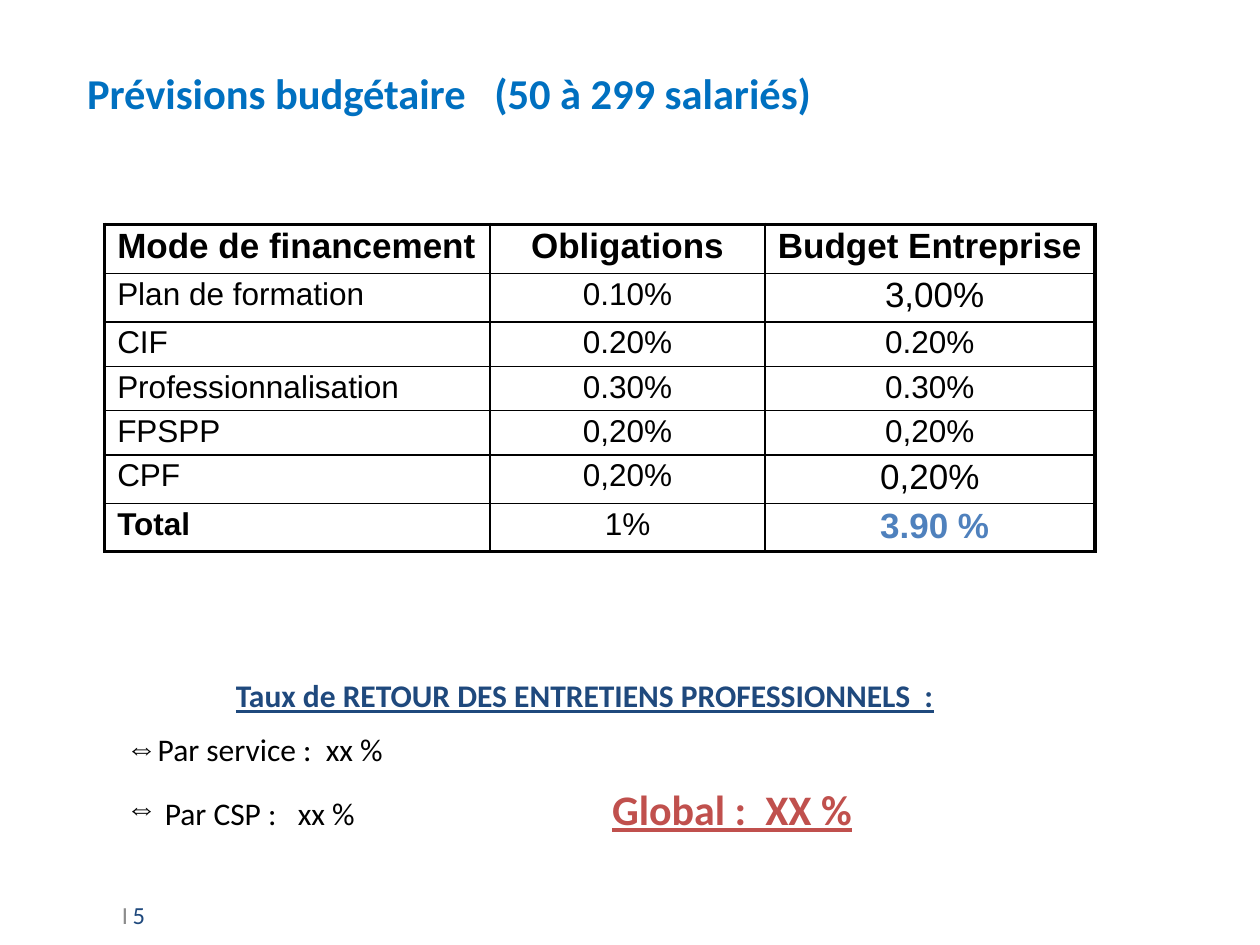
from lxml import etree
from pptx import Presentation
from pptx.dml.color import RGBColor
from pptx.enum.text import MSO_ANCHOR, MSO_AUTO_SIZE, PP_ALIGN
from pptx.oxml.ns import qn
from pptx.util import Cm, Pt

LEFT, CENTER = PP_ALIGN.LEFT, PP_ALIGN.CENTER
MIDDLE = MSO_ANCHOR.MIDDLE
COLORS = {"black": "000000", "title": "0070C0", "navy": "1F497D",
          "blue": "4F81BD", "red": "C0504D", "gray": "8C8C8C"}

# Content
TITLE = "Prévisions budgétaire   (50 à 299 salariés)"
ROWS = [
    ("Mode de financement", "Obligations", "Budget Entreprise"),
    ("Plan de formation", "0.10%", " 3,00%"),
    ("CIF", "0.20%", "0.20%"),
    ("Professionnalisation", "0.30%", "0.30%"),
    ("FPSPP", "0,20%", "0,20%"),
    ("CPF", "0,20%", "0,20%"),
    ("Total", "1%", " 3.90 %"),
]
COL_WIDTHS = [7.77, 5.54, 6.65]
ROW_HEIGHTS = [0.99, 0.98, 0.89, 0.89, 0.89, 0.98, 0.95]
LAST_ROW, LAST_COL = len(ROWS) - 1, len(COL_WIDTHS) - 1
LARGE_CELLS = {(1, 2), (5, 2), (6, 2)}
BOLD_CELLS = {(LAST_ROW, 0), (LAST_ROW, LAST_COL)}
RATES_HEADING = "Taux de RETOUR DES ENTRETIENS PROFESSIONNELS  :"
RATES = ["Par service :  xx %", " Par CSP :   xx %"]
GLOBAL_RATE = "Global :  XX %"
PAGE_RUNS = [(" ", 12, "gray"), ("I", 14, "gray"), (" ", 12, "gray"), ("5", 14, "navy")]


def add_run(p, text, size, color="black", font="Calibri", bold=False, underline=False):
    r = p.add_run()
    r.text = text
    r.font.size, r.font.name = Pt(size), font
    r.font.bold, r.font.underline = bold, underline
    r.font.color.rgb = RGBColor.from_string(COLORS[color])


def add_text_frame(s, left, top, width, height):
    tf = s.shapes.add_textbox(Cm(left), Cm(top), Cm(width), Cm(height)).text_frame
    tf.word_wrap = True
    return tf


def set_borders(cell, row, col):
    outer = {"L": col == 0, "R": col == LAST_COL, "T": row == 0, "B": row == LAST_ROW}
    tcPr = cell._tc.get_or_add_tcPr()
    for i, (side, thick) in enumerate(outer.items()):
        ln = etree.Element(qn(f"a:ln{side}"), w=str(Pt(2.25 if thick else 1)))
        fill = etree.SubElement(ln, qn("a:solidFill"))
        etree.SubElement(fill, qn("a:srgbClr"), val=COLORS["black"])
        tcPr.insert(i, ln)


def set_bullet(p, char, indent, tab=None):
    pPr = p._p.get_or_add_pPr()
    pPr.set("marL", str(indent))
    pPr.set("indent", str(-indent))
    etree.SubElement(pPr, qn("a:buFont"), typeface="Arial")
    etree.SubElement(pPr, qn("a:buChar"), char=char)
    if tab:
        tabs = etree.SubElement(pPr, qn("a:tabLst"))
        etree.SubElement(tabs, qn("a:tab"), pos=str(tab), algn="l")


prs = Presentation()
prs.slide_width, prs.slide_height = Cm(25.4), Cm(19.05)
s = prs.slides.add_slide(prs.slide_layouts[5])

# Title, raised within its box by the bottom inset
title = s.shapes.title
title.left, title.top, title.width, title.height = Cm(1.5), Cm(1.73), Cm(18), Cm(0.94)
tf = title.text_frame
tf.auto_size, tf.vertical_anchor = MSO_AUTO_SIZE.NONE, MIDDLE
tf.margin_top, tf.margin_bottom = 0, Cm(0.69)
tf.paragraphs[0].alignment = LEFT
add_run(tf.paragraphs[0], TITLE, 24.3, "title", bold=True)

# Budget table
table = s.shapes.add_table(len(ROWS), len(COL_WIDTHS), Cm(2.11), Cm(4.52),
                           Cm(sum(COL_WIDTHS)), Cm(sum(ROW_HEIGHTS))).table
table.first_row = table.horz_banding = False
for column, width in zip(table.columns, COL_WIDTHS):
    column.width = Cm(width)
for i, (values, height) in enumerate(zip(ROWS, ROW_HEIGHTS)):
    table.rows[i].height = Cm(height)
    for j, value in enumerate(values):
        cell = table.cell(i, j)
        cell.fill.background()
        set_borders(cell, i, j)
        p = cell.text_frame.paragraphs[0]
        p.alignment = CENTER if j else LEFT
        p.line_spacing = 0.9
        add_run(p, value, 20 if i == 0 or (i, j) in LARGE_CELLS else 18,
                "blue" if (i, j) == (LAST_ROW, LAST_COL) else "black",
                "Arial", i == 0 or (i, j) in BOLD_CELLS)

# Return rates
tf = add_text_frame(s, 2.29, 13.51, 19, 4.83)
p = tf.paragraphs[0]
p.alignment = CENTER
add_run(p, RATES_HEADING, 18, "navy", bold=True, underline=True)
for rate in RATES:
    p = tf.add_paragraph()
    p.space_before = Pt(9)
    last = rate == RATES[-1]
    set_bullet(p, "⇔", Cm(0.64), Cm(9.8) if last else None)
    add_run(p, rate + ("\t" if last else ""), 18)
add_run(p, GLOBAL_RATE, 24, "red", bold=True, underline=True)

# Page number
tf = add_text_frame(s, 2.11, 17.78, 2.54, 1.32)
tf.vertical_anchor = MIDDLE
for text, size, color in PAGE_RUNS:
    add_run(tf.paragraphs[0], text, size, color)

prs.save("out.pptx")
